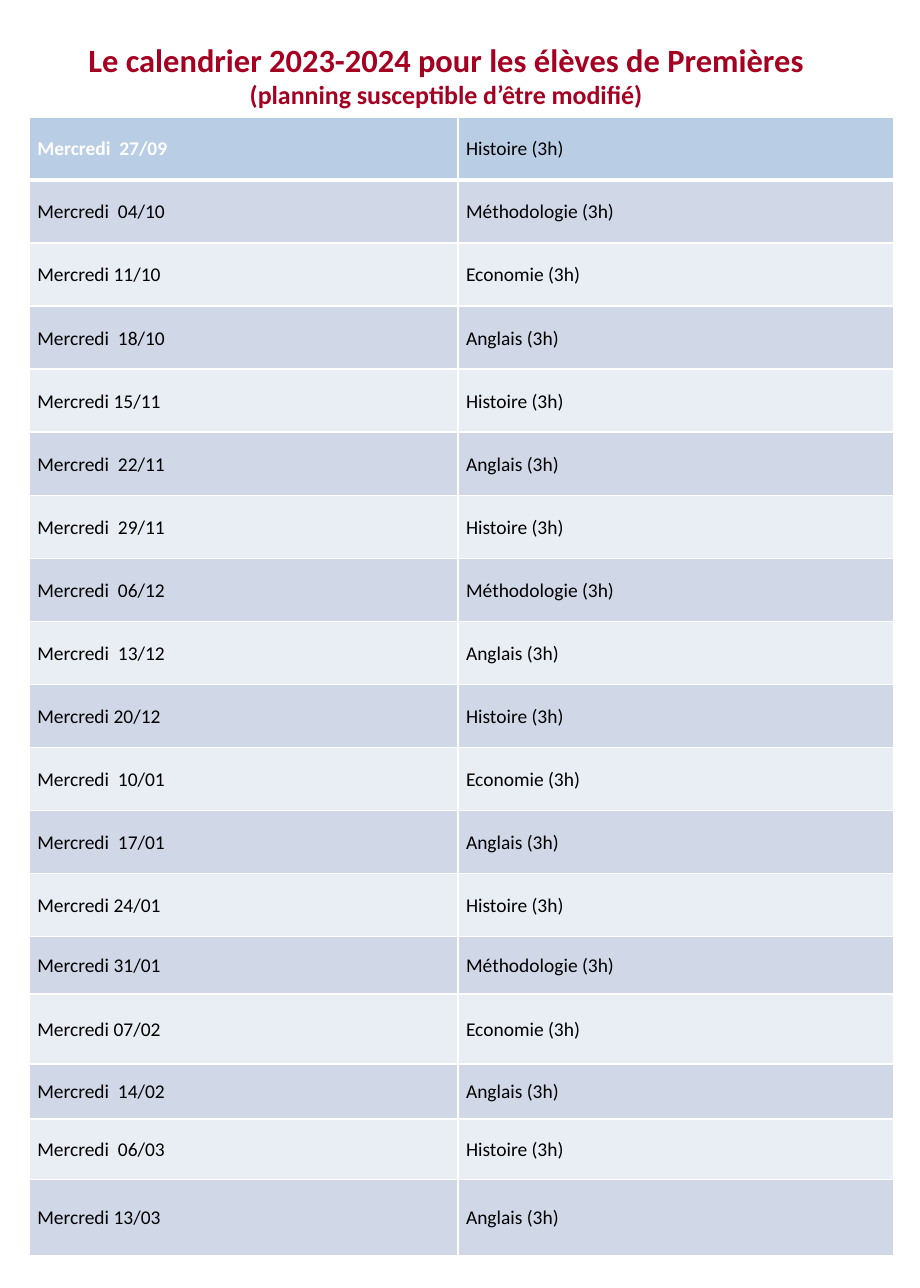
from lxml import etree
from pptx import Presentation
from pptx.dml.color import RGBColor
from pptx.enum.text import MSO_ANCHOR, PP_ALIGN
from pptx.oxml.ns import qn
from pptx.util import Inches, Pt

CENTER, LEFT = PP_ALIGN.CENTER, PP_ALIGN.LEFT
MIDDLE, BOTTOM = MSO_ANCHOR.MIDDLE, MSO_ANCHOR.BOTTOM

TITLE = "Le calendrier 2023-2024 pour les élèves de Premières"
SUBTITLE = "(planning susceptible d’être modifié)"
SESSIONS = [
    ("Mercredi  27/09", "Histoire (3h)"),
    ("Mercredi  04/10", "Méthodologie (3h)"),
    ("Mercredi 11/10", "Economie (3h)"),
    ("Mercredi  18/10", "Anglais (3h)"),
    ("Mercredi 15/11", "Histoire (3h)"),
    ("Mercredi  22/11", "Anglais (3h)"),
    ("Mercredi  29/11", "Histoire (3h)"),
    ("Mercredi  06/12", "Méthodologie (3h)"),
    ("Mercredi  13/12", "Anglais (3h)"),
    ("Mercredi 20/12", "Histoire (3h)"),
    ("Mercredi  10/01", "Economie (3h)"),
    ("Mercredi  17/01", "Anglais (3h)"),
    ("Mercredi 24/01", "Histoire (3h)"),
    ("Mercredi 31/01", "Méthodologie (3h)"),
    ("Mercredi 07/02", "Economie (3h)"),
    ("Mercredi  14/02", "Anglais (3h)"),
    ("Mercredi  06/03", "Histoire (3h)"),
    ("Mercredi 13/03", "Anglais (3h)"),
]
# 20 cm by 28 cm, rounded to an eighth of a point
PAGE_WIDTH, PAGE_HEIGHT = Pt(567), Pt(793.75)
COLUMN_WIDTHS = [3.67, 3.73]
ROW_HEIGHTS = [0.54] * 13 + [0.49, 0.6, 0.47, 0.52, 0.65]
CRIMSON, WHITE, BLACK = "A50021", "FFFFFF", "000000"
FIRST_FILL = "B9CDE5"
BAND_FILLS = ["E9EDF4", "D0D8E8"]


def color(hex_code):
    return RGBColor.from_string(hex_code)


def write(paragraph, text, size=12, ink=BLACK, bold=False, align=LEFT,
          line_spacing=None, space_after=0):
    paragraph.alignment = align
    paragraph.space_after = Pt(space_after)
    if line_spacing:
        paragraph.line_spacing = line_spacing
    run = paragraph.add_run()
    run.text = text
    run.font.name = "Calibri"
    run.font.size = Pt(size)
    run.font.bold = bold
    run.font.color.rgb = color(ink)


def set_borders(cell, top, bottom):
    """Draw white cell borders; left and right are one point wide."""
    properties = cell._tc.get_or_add_tcPr()
    sides = [("a:lnL", 1), ("a:lnR", 1), ("a:lnT", top), ("a:lnB", bottom)]
    for position, (side, width) in enumerate(sides):
        line = etree.Element(qn(side), w=str(Pt(width)))
        fill = etree.SubElement(line, qn("a:solidFill"))
        etree.SubElement(fill, qn("a:srgbClr"), val=WHITE)
        properties.insert(position, line)


def add_heading(slide):
    box = slide.shapes.add_textbox(Inches(0.63), Inches(-0.04), Inches(6.38), Inches(1.04))
    frame = box.text_frame
    frame.word_wrap = True
    frame.vertical_anchor = BOTTOM
    frame.margin_bottom = Inches(0.06)
    write(frame.paragraphs[0], TITLE, size=20, ink=CRIMSON, bold=True, align=CENTER)
    write(frame.add_paragraph(), SUBTITLE, size=16, ink=CRIMSON, bold=True, align=CENTER)


def add_calendar(slide):
    calendar = slide.shapes.add_table(
        len(SESSIONS), len(COLUMN_WIDTHS), Inches(0.25), Inches(1),
        Inches(sum(COLUMN_WIDTHS)), Inches(sum(ROW_HEIGHTS))).table
    for column, width in zip(calendar.columns, COLUMN_WIDTHS):
        column.width = Inches(width)
    for row, height in zip(calendar.rows, ROW_HEIGHTS):
        row.height = Inches(height)

    for r, session in enumerate(SESSIONS):
        for c, text in enumerate(session):
            cell = calendar.cell(r, c)
            cell.vertical_anchor = MIDDLE
            cell.margin_left = cell.margin_right = Inches(0.07)
            cell.margin_top = cell.margin_bottom = Inches(0.04)
            cell.fill.solid()
            cell.fill.fore_color.rgb = color(BAND_FILLS[r % 2] if r else FIRST_FILL)
            set_borders(cell, top=3 if r == 1 else 1, bottom=3 if r == 0 else 1)
            first_date = r == 0 and c == 0
            write(cell.text_frame.paragraphs[0], text, bold=first_date,
                  ink=WHITE if first_date else BLACK, line_spacing=1.07, space_after=8)


def main():
    deck = Presentation()
    deck.slide_width, deck.slide_height = PAGE_WIDTH, PAGE_HEIGHT
    slide = deck.slides.add_slide(deck.slide_layouts[6])
    add_heading(slide)
    add_calendar(slide)
    deck.save("out.pptx")


if __name__ == "__main__":
    main()
